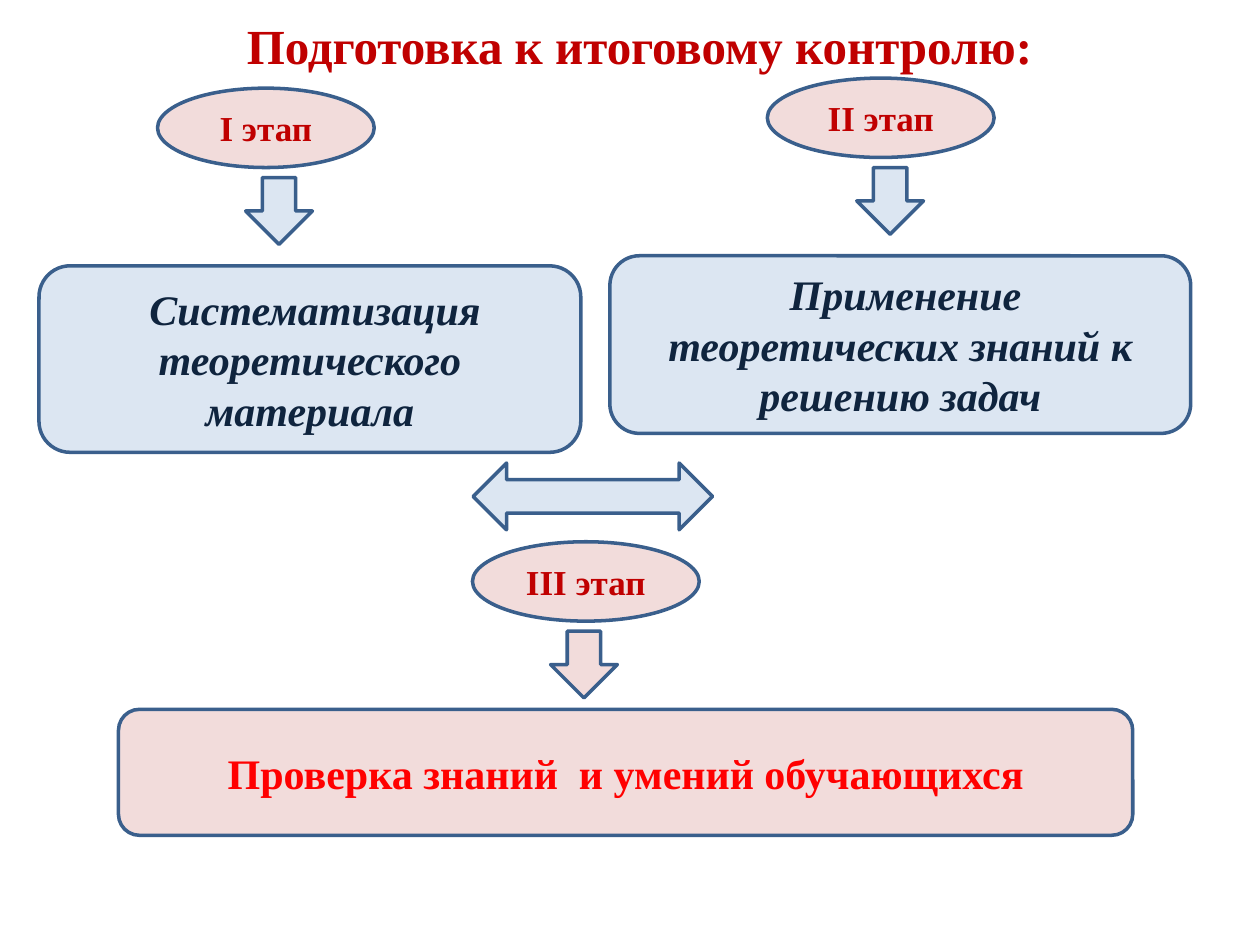
from pptx import Presentation
from pptx.dml.color import RGBColor
from pptx.enum.shapes import MSO_SHAPE
from pptx.enum.text import MSO_ANCHOR, PP_ALIGN
from pptx.util import Inches, Pt

OVAL = MSO_SHAPE.OVAL
ROUND = MSO_SHAPE.ROUNDED_RECTANGLE
DOWN = MSO_SHAPE.DOWN_ARROW
DOUBLE = MSO_SHAPE.UP_DOWN_ARROW
MIDDLE = MSO_ANCHOR.MIDDLE
CENTER = PP_ALIGN.CENTER

PINK = RGBColor(0xF2, 0xDC, 0xDB)
PALE = RGBColor(0xDC, 0xE6, 0xF2)
EDGE = RGBColor(0x3A, 0x5F, 0x8C)
CRIMSON = RGBColor(0xC0, 0x00, 0x00)
RED = RGBColor(0xFF, 0x00, 0x00)
NAVY = RGBColor(0x0F, 0x24, 0x3E)

FONT = "Times New Roman"
TITLE = "Подготовка к итоговому контролю:"
STAGES = [
    dict(name="I этап", oval=(1.25, 0.7, 1.72), arrow=1.95,
         text=" Систематизация теоретического материала",
         box=(0.31, 2.11, 4.3, 1.48), fill=PALE, ink=NAVY, slant=True),
    dict(name="II этап", oval=(6.09, 0.62, 1.8), arrow=6.8,
         text=" Применение теоретических знаний к решению задач",
         box=(4.84, 2.03, 4.61, 1.41), fill=PALE, ink=NAVY, slant=True),
    dict(name="III этап", oval=(3.75, 4.3, 1.8), arrow=4.37,
         text="Проверка знаний  и умений обучающихся",
         box=(0.94, 5.63, 8.05, 1), fill=PINK, ink=RED, slant=False),
]
OVAL_H = 0.63
GAP = 0.08
ARROW = 0.53
LINK = (4.44, 2.99, ARROW, 1.9)


def write(shape, text, size, ink, slant=False):
    frame = shape.text_frame
    frame.text = text
    frame.word_wrap = True
    frame.vertical_anchor = MIDDLE
    para = frame.paragraphs[0]
    para.alignment = CENTER
    font = para.runs[0].font
    font.name = FONT
    font.size = Pt(size)
    font.bold = True
    font.italic = slant
    font.color.rgb = ink


def draw(slide, kind, place, fill):
    shape = slide.shapes.add_shape(kind, *map(Inches, place))
    shape.shadow.inherit = False
    shape.fill.solid()
    shape.fill.fore_color.rgb = fill
    shape.line.color.rgb = EDGE
    shape.line.width = Pt(2)
    return shape


def main():
    deck = Presentation()
    deck.slide_width, deck.slide_height = Inches(10), Inches(7.5)
    slide = deck.slides.add_slide(deck.slide_layouts[5])

    title = slide.shapes.title
    title.left, title.top = Inches(0.7), Inches(0)
    title.width, title.height = Inches(8.75), Inches(0.72)
    write(title, TITLE, 28, CRIMSON)

    for stage in STAGES:
        left, top, width = stage["oval"]
        oval = draw(slide, OVAL, (left, top, width, OVAL_H), PINK)
        write(oval, stage["name"], 20, CRIMSON)
        below = top + OVAL_H + GAP
        draw(slide, DOWN, (stage["arrow"], below, ARROW, ARROW), stage["fill"])
        box = draw(slide, ROUND, stage["box"], stage["fill"])
        write(box, stage["text"], 24, stage["ink"], stage["slant"])

    draw(slide, DOUBLE, LINK, PALE).rotation = 90
    deck.save("out.pptx")


if __name__ == "__main__":
    main()
